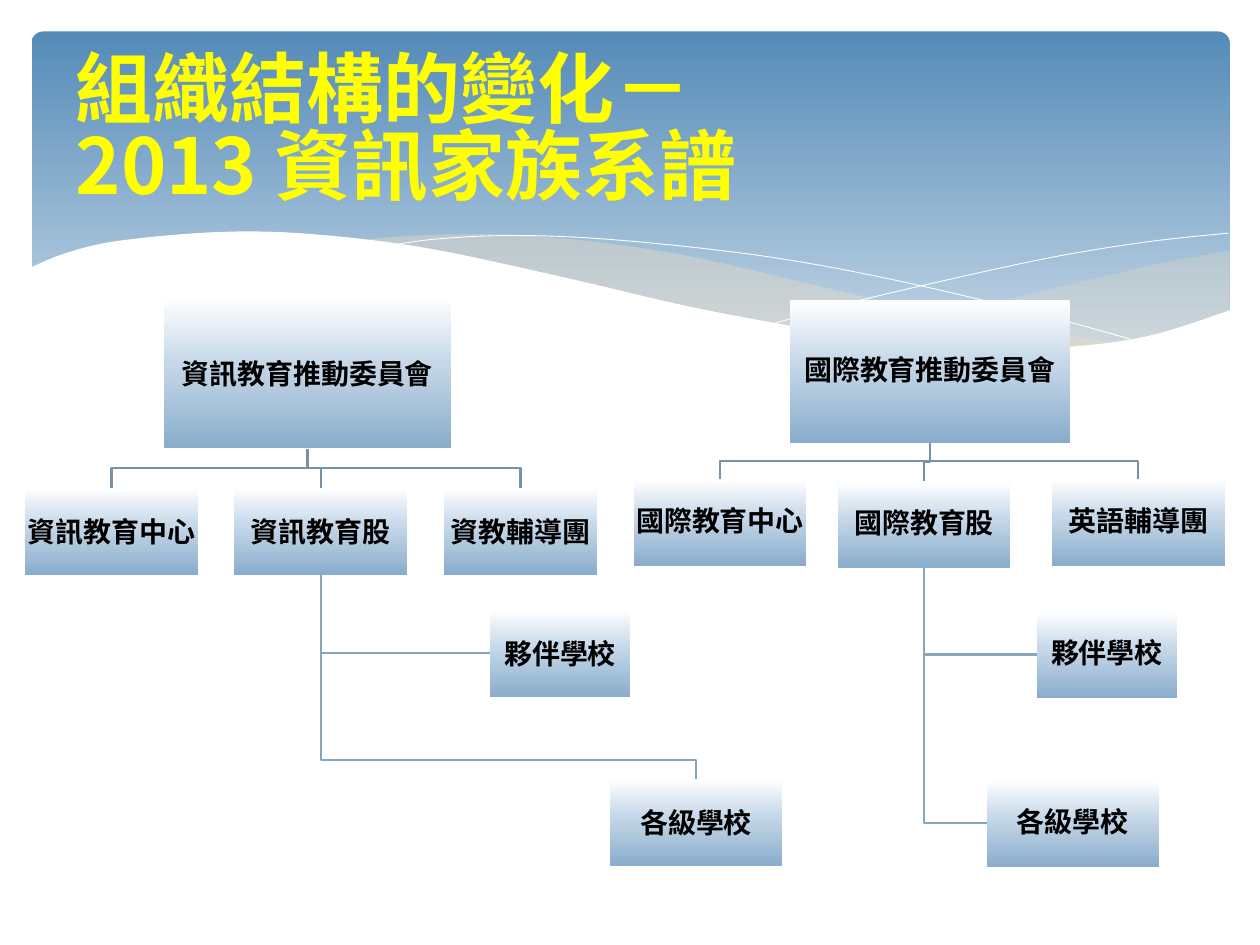
import dataclasses

import lxml.etree
import pptx
import pptx.dml.color
import pptx.enum.shapes
import pptx.enum.text
import pptx.oxml.ns
import pptx.util


@dataclasses.dataclass(frozen=True)
class Theme:
    font: str = "Noto Sans CJK SC"
    title_size: float = 44
    label_size: float = 16
    title_color: str = "FFFF00"
    text_color: str = "000000"
    white: str = "FFFFFF"
    sand: str = "EBDDC3"
    upper_line: str = "7792A8"
    lower_line: str = "86A5BF"
    line_width: float = 1.25
    hairline: float = 0.5
    panel_stops: tuple = ((0, "558BB8"), (90, "BFD3E4"))
    node_stops: tuple = ((0, "FFFFFF"), (44, "C5D7E8"), (100, "89ADCC"))


@dataclasses.dataclass(frozen=True)
class Box:
    column: float
    row: float
    width: float
    height: float

    def inside(self, parent):
        return Box(parent.column + self.column, parent.row + self.row, self.width, self.height)

    @property
    def top(self):
        return self.column + self.width / 2, self.row

    @property
    def bottom(self):
        return self.column + self.width / 2, self.row + self.height

    @property
    def left(self):
        return self.column, self.row + self.height / 2


THEME = Theme()
SLIDE_WIDTH = pptx.util.Inches(10)
SLIDE_HEIGHT = pptx.util.Inches(7.5)
COLUMN = SLIDE_WIDTH / 100
ROW = SLIDE_HEIGHT / 75
NODE_HEIGHT = 6.9


def rgb(color):
    return pptx.dml.color.RGBColor.from_string(color)


def child(parent, tag, **attributes):
    return lxml.etree.SubElement(parent, pptx.oxml.ns.qn(tag), attributes)


def place(shape, box):
    shape.left, shape.width = round(box.column * COLUMN), round(box.width * COLUMN)
    shape.top, shape.height = round(box.row * ROW), round(box.height * ROW)


def write(shape, text, size, color, align, spacing=1.0, inset=0.01):
    frame = shape.text_frame
    frame.word_wrap = True
    frame.vertical_anchor = pptx.enum.text.MSO_ANCHOR.MIDDLE
    frame.margin_left = frame.margin_right = pptx.util.Inches(inset)
    frame.margin_top = frame.margin_bottom = pptx.util.Inches(inset / 2)
    paragraph = frame.paragraphs[0]
    paragraph.text = text
    paragraph.alignment = align
    paragraph.line_spacing = spacing
    for run in paragraph.runs:
        run.font.size = pptx.util.Pt(size)
        run.font.bold = True
        run.font.color.rgb = rgb(color)
        run.font.name = THEME.font
        child(run.font._element, "a:ea", typeface=THEME.font)


def gradient_shape(slide, kind, box, stops):
    shape = slide.shapes.add_shape(kind, 0, 0, 0, 0)
    place(shape, box)
    shape.shadow.inherit = False
    shape.line.fill.background()
    shape.fill.gradient()
    shape.fill.gradient_angle = 270
    stop_list = next(shape.element.iter(pptx.oxml.ns.qn("a:gsLst")))
    for stop in list(stop_list):
        stop_list.remove(stop)
    for position, color in stops:
        stop = child(stop_list, "a:gs", pos=str(position * 1000))
        child(stop, "a:srgbClr", val=color)
    return shape


def outline(slide, points, fill=None, opacity=100, line=None, width=0):
    points = [(round(x * COLUMN), round(y * ROW)) for x, y in points]
    builder = slide.shapes.build_freeform(*points[0])
    builder.add_line_segments(points[1:], close=fill is not None)
    shape = builder.convert_to_shape()
    shape.shadow.inherit = False
    if fill:
        shape.fill.solid()
        shape.fill.fore_color.rgb = rgb(fill)
        color = next(shape.element.spPr.iter(pptx.oxml.ns.qn("a:srgbClr")))
        child(color, "a:alpha", val=str(opacity * 1000))
    else:
        shape.fill.background()
    if line:
        shape.line.color.rgb = rgb(line)
        shape.line.width = pptx.util.Pt(width)
    else:
        shape.line.fill.background()


def smooth(points, steps=6):
    padded = [points[0], *points, points[-1]]
    curve = []
    for before, start, end, after in zip(padded, padded[1:], padded[2:], padded[3:]):
        for step in range(steps):
            t = step / steps
            curve.append(tuple(
                b + t * (c - a) / 2
                + t**2 * (2 * a - 5 * b + 4 * c - d) / 2
                + t**3 * (3 * b - a - 3 * c + d) / 2
                for a, b, c, d in zip(before, start, end, after)))
    return curve + [points[-1]]


def add_banner(slide, panel, waves):
    shape = gradient_shape(slide, pptx.enum.shapes.MSO_SHAPE.ROUNDED_RECTANGLE,
                           panel, THEME.panel_stops)
    shape.adjustments[0] = 0.034

    def curve(*points):
        return smooth([(waves.column + x, waves.row + y) for x, y in points])

    right_band = (curve((97.6, 1.9), (92.1, 2.9), (86.1, 4.3), (77.9, 6.2), (66.1, 8.5))
                  + curve((66.1, 8.5), (71.8, 9.2), (76.9, 9.7), (81.4, 9.8), (86.3, 9.5),
                          (91.3, 8.7), (94.9, 7.7), (97.6, 6.7)))
    middle_band = (curve((89.3, 9.3), (80.7, 8), (70.6, 6), (62.9, 4.2), (55.5, 2.5),
                         (48.9, 1.4), (42, 0.7), (36.1, 0.6), (31.3, 0.8), (28.6, 1.1))
                   + curve((28.6, 1.1), (36.2, 2.3), (44.9, 4.2), (53, 6), (61.8, 7.8),
                           (69.5, 9), (76.1, 9.7), (81.8, 9.8), (86.7, 9.6), (89.3, 9.3)))
    outline(slide, right_band, fill=THEME.sand, opacity=29)
    outline(slide, middle_band, fill=THEME.sand, opacity=40)
    for points in (
        ((30.9, 1.5), (34.4, 1), (40.1, 0.7), (46.9, 0.9), (55.6, 1.7), (63.6, 2.8),
         (72.7, 4.6), (83.1, 7.1), (90.7, 9.2)),
        ((61.3, 7.7), (67.2, 6.1), (74.8, 4.3), (83.6, 2.4), (91, 1.2), (97.5, 0.5)),
    ):
        outline(slide, curve(*points), line=THEME.white, width=THEME.hairline)
    wave = curve((2.3, 3.3), (5.2, 2.1), (9.5, 1.1), (17.7, 0.4), (25, 0.6), (33.9, 1.7),
                 (44.7, 4), (55.5, 6.5), (66.8, 8.5), (76.1, 9.5), (83.7, 9.6),
                 (91, 8.7), (97.7, 6.6))
    floor = waves.row + waves.height
    outline(slide, wave + [(wave[-1][0], floor), (wave[0][0], floor)], fill=THEME.white)


def add_title(slide, box):
    title = slide.shapes.title
    title.element.getparent().append(title.element)
    place(title, box)
    write(title, "組織結構的變化－\v2013 資訊家族系譜", THEME.title_size, THEME.title_color,
          pptx.enum.text.PP_ALIGN.LEFT, spacing=0.83, inset=0.1)


def add_tree(slide, area, root, branches, partner, schools, schools_from_top, spacing):
    nodes = [(label, box.inside(area)) for label, box in (root, *branches, partner, schools)]
    trunk, first, middle, last, partner_box, schools_box = [box for _, box in nodes]

    def link(points, color):
        outline(slide, points, line=color, width=THEME.line_width)

    def drop(start, end, bend):
        return [start, (start[0], bend), (end[0], bend), end]

    def turn(start, end):
        return [start, (start[0], end[1]), end]

    for branch in (first, middle, last):
        link(drop(trunk.bottom, branch.top, (trunk.bottom[1] + branch.row) / 2),
             THEME.upper_line)
    link(turn(middle.bottom, partner_box.left), THEME.lower_line)
    if schools_from_top:
        path_points = drop(middle.bottom, schools_box.top, schools_box.row - 1.5)
    else:
        path_points = turn(middle.bottom, schools_box.left)
    link(path_points, THEME.lower_line)
    for label, box in nodes:
        shape = gradient_shape(slide, pptx.enum.shapes.MSO_SHAPE.RECTANGLE,
                               box, THEME.node_stops)
        write(shape, label, THEME.label_size, THEME.text_color,
              pptx.enum.text.PP_ALIGN.CENTER, spacing=spacing)


def main():
    presentation = pptx.Presentation()
    presentation.slide_width, presentation.slide_height = SLIDE_WIDTH, SLIDE_HEIGHT
    slide = presentation.slides.add_slide(presentation.slide_layouts[5])
    add_banner(slide, Box(2.5, 2.5, 95.1, 27), Box(0, 18, 100, 14.9))
    add_title(slide, Box(5, 3.7, 90, 13.7))
    add_tree(
        slide, Box(50.3, 23.8, 47, 45),
        root=("國際教育推動委員會", Box(12.4, 0, 22.2, 11.4)),
        branches=(("國際教育中心", Box(0, 14.2, 13.7, NODE_HEIGHT)),
                  ("國際教育股", Box(16.2, 14.4, 13.7, NODE_HEIGHT)),
                  ("英語輔導團", Box(33.2, 14.2, 13.7, NODE_HEIGHT))),
        partner=("夥伴學校", Box(32, 24.7, 11.1, NODE_HEIGHT)),
        schools=("各級學校", Box(28, 38.1, 13.7, NODE_HEIGHT)),
        schools_from_top=False, spacing=0.9)
    add_tree(
        slide, Box(2, 23.6, 60.1, 45.1),
        root=("資訊教育推動委員會", Box(11, 0, 22.8, 12)),
        branches=(("資訊教育中心", Box(0, 15.1, 13.7, NODE_HEIGHT)),
                  ("資訊教育股", Box(16.6, 15.1, 13.7, NODE_HEIGHT)),
                  ("資教輔導團", Box(33.2, 15.1, 12.2, NODE_HEIGHT))),
        partner=("夥伴學校", Box(36.9, 24.8, 11.1, NODE_HEIGHT)),
        schools=("各級學校", Box(46.4, 38.2, 13.7, NODE_HEIGHT)),
        schools_from_top=True, spacing=1.0)
    presentation.save("out.pptx")


if __name__ == "__main__":
    main()
